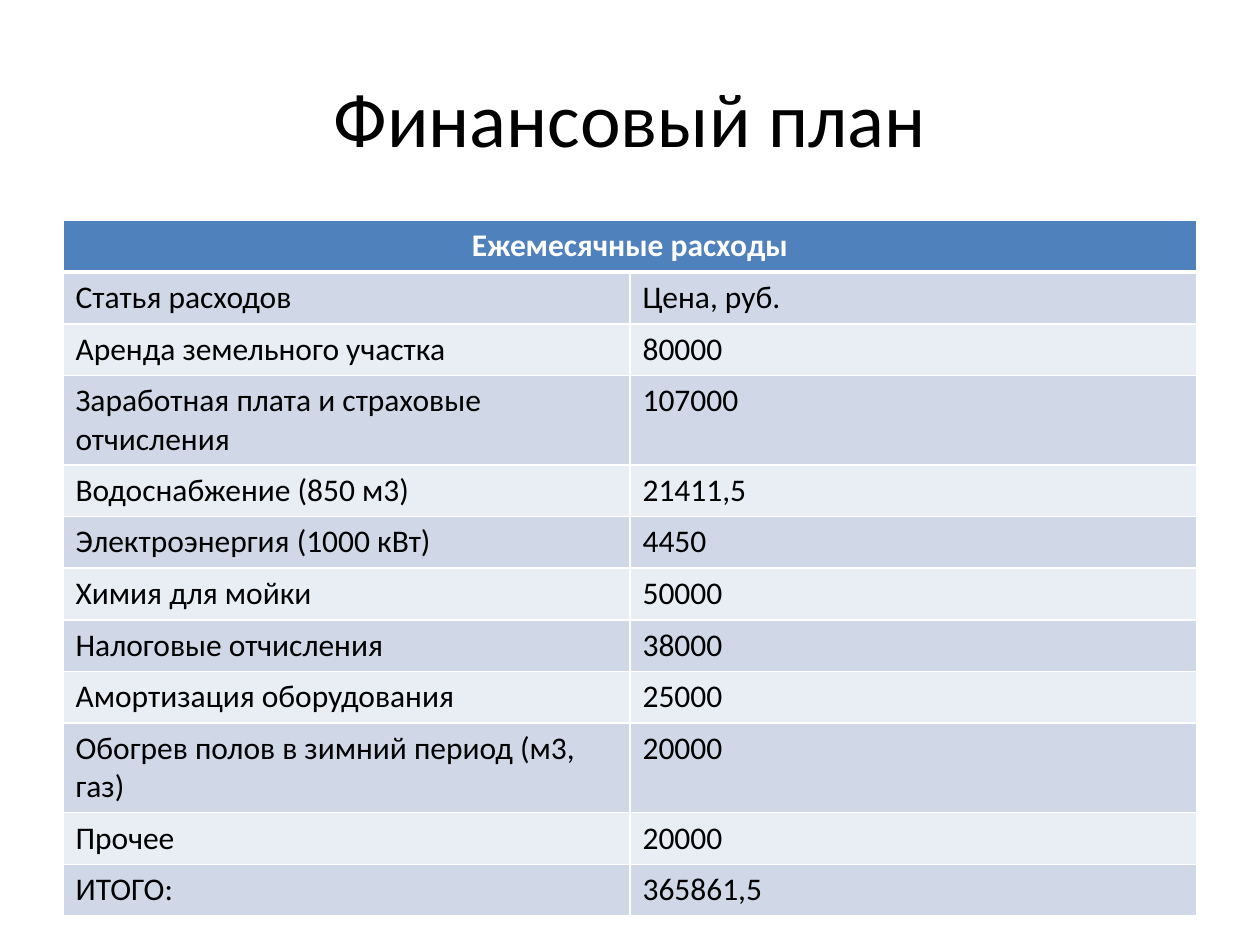
"""Build the monthly expenses slide of the financial plan."""
from lxml import etree
from pptx import Presentation
from pptx import util as u
from pptx.dml import color
from pptx.enum import text
from pptx.oxml import ns

EXPENSES = [
    ("Статья расходов", "Цена, руб."),
    ("Аренда земельного участка", "80000"),
    ("Заработная плата и страховые отчисления", "107000"),
    ("Водоснабжение (850 м3)", "21411,5"),
    ("Электроэнергия (1000 кВт)", "4450"),
    ("Химия для мойки", "50000"),
    ("Налоговые отчисления", "38000"),
    ("Амортизация оборудования", "25000"),
    ("Обогрев полов в зимний период (м3, газ)", "20000"),
    ("Прочее", "20000"),
    ("ИТОГО:", "365861,5"),
]


def rgb(value):
    """Return the colour for a hex string."""
    return color.RGBColor.from_string(value)


class PlanSlide:
    """Hold the style and the current slide."""

    FONT, BLACK, WHITE, HEADER = "Calibri", "000000", "FFFFFF", "4F81BD"
    BANDS = ("D0D8E8", "E9EDF4")

    def __init__(self, deck):
        """Add a slide with a title only."""
        self.slide = deck.slides.add_slide(deck.slide_layouts[5])

    def label(self, frame, words, size, ink, bold=False, align=text.PP_ALIGN.LEFT):
        """Put one formatted paragraph into a text frame."""
        frame.text = words
        paragraph = frame.paragraphs[0]
        paragraph.alignment = align
        font = paragraph.runs[0].font
        for name, value in {"name": self.FONT, "size": u.Pt(size), "bold": bold}.items():
            setattr(font, name, value)
        font.color.rgb = rgb(ink)

    def title(self, words, left, top, width, height):
        """Place and fill the title placeholder."""
        heading = self.slide.shapes.title
        box = {"left": left, "top": top, "width": width, "height": height}
        for name, value in box.items():
            setattr(heading, name, u.Inches(value))
        heading.text_frame.vertical_anchor = text.MSO_ANCHOR.MIDDLE
        self.label(heading.text_frame, words, 44, self.BLACK, align=text.PP_ALIGN.CENTER)

    def border(self, cell, **widths):
        """Draw white cell borders, with widths in points by side."""
        for side in "LRTB":
            line = etree.SubElement(cell._tc.get_or_add_tcPr(), ns.qn(f"a:ln{side}"),
                                    w=str(u.Pt(widths.get(side, 1))))
            fill = etree.SubElement(line, ns.qn("a:solidFill"))
            etree.SubElement(fill, ns.qn("a:srgbClr"), val=self.WHITE)

    def paint(self, cell, fill):
        """Fill a cell with a plain colour."""
        cell.fill.solid()
        cell.fill.fore_color.rgb = rgb(fill)

    def table(self, heading, rows, left, top, width, row_height):
        """Add a banded table under one merged heading row."""
        count = len(rows) + 1
        grid = self.slide.shapes.add_table(
            count, 2, u.Inches(left), u.Inches(top),
            u.Inches(width), u.Inches(row_height * count)).table
        for row in grid.rows:
            row.height = u.Inches(row_height)
        grid.cell(0, 0).merge(grid.cell(0, 1))
        for cell in grid.rows[0].cells:
            self.border(cell, B=3)
            self.paint(cell, self.HEADER)
        self.label(grid.cell(0, 0).text_frame, heading, 18, self.WHITE, True,
                   text.PP_ALIGN.CENTER)
        for index, values in enumerate(rows):
            for cell, words in zip(grid.rows[index + 1].cells, values):
                self.border(cell, T=1 if index else 3)
                self.paint(cell, self.BANDS[index % 2])
                self.label(cell.text_frame, words, 18, self.BLACK)


def main():
    """Build and save the deck."""
    deck = Presentation()
    deck.slide_width, deck.slide_height = u.Inches(10), u.Inches(7.5)
    plan = PlanSlide(deck)
    plan.title("Финансовый план", 0.5, 0.3, 9, 1.25)
    plan.table("Ежемесячные расходы", EXPENSES, 0.5, 1.75, 9, 0.41)
    deck.save("out.pptx")


if __name__ == "__main__":
    main()
